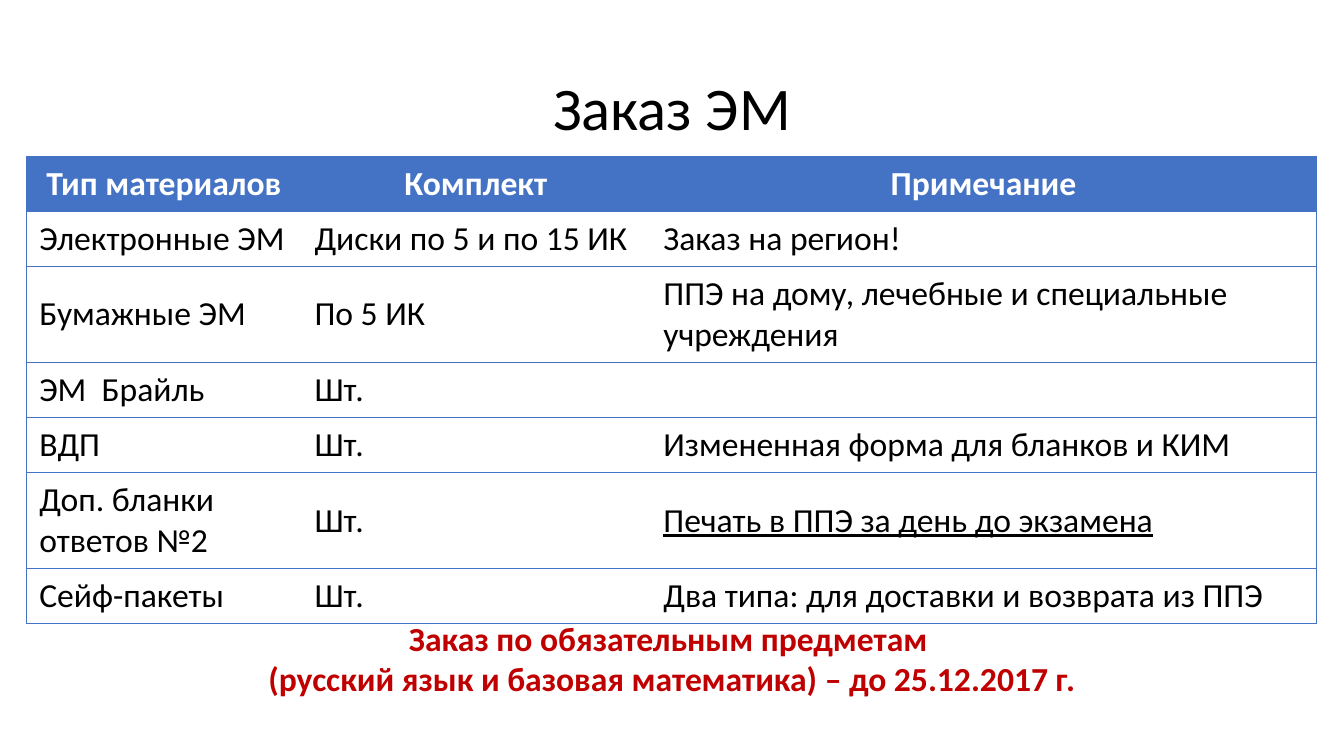
from lxml.etree import SubElement
from pptx import Presentation
from pptx.dml.color import RGBColor
from pptx.enum.text import MSO_ANCHOR, MSO_AUTO_SIZE, PP_ALIGN
from pptx.oxml.ns import qn
from pptx.util import Inches, Pt

BLUE = RGBColor(0x44, 0x72, 0xC4)
RED = RGBColor(0xC0, 0x00, 0x00)
BLACK = RGBColor(0, 0, 0)
WHITE = RGBColor(0xFF, 0xFF, 0xFF)

WIDE, HIGH = Inches(13.33), Inches(7.5)
LEFT, SPAN = Inches(0.26), Inches(12.81)
COLS = [2.73, 3.46, 6.61]
LINE, EXTRA = 0.53, 0.4
TALL = {2, 5}
UNDER = (5, 2)
ROWS = [
    ("Тип материалов", "Комплект", "Примечание"),
    ("Электронные ЭМ", "Диски по 5 и по 15 ИК", "Заказ на регион!"),
    ("Бумажные ЭМ", "По 5 ИК", "ППЭ на дому, лечебные и специальные учреждения"),
    ("ЭМ  Брайль", "Шт.", ""),
    ("ВДП", "Шт.", "Измененная форма для бланков и КИМ"),
    ("Доп. бланки ответов №2", "Шт.", "Печать в ППЭ за день до экзамена"),
    ("Сейф-пакеты", "Шт.", "Два типа: для доставки и возврата из ППЭ"),
]
NOTE = [
    "Заказ по обязательным предметам ",
    "(русский язык и базовая математика) – до 25.12.2017 г.",
]


def write(frame, lines, size=24, color=BLACK, bold=False, under=False,
          align=PP_ALIGN.LEFT, space=1.0):
    frame.word_wrap = True
    for i, line in enumerate(lines):
        para = frame.add_paragraph() if i else frame.paragraphs[0]
        para.alignment = align
        para.line_spacing = space
        para.font.size = Pt(size)
        if not line:
            continue
        run = para.add_run()
        run.text = line
        font = run.font
        font.name = "Calibri"
        font.size = Pt(size)
        font.bold = bold
        font.underline = under
        font.color.rgb = color


def edge(cell, side, shown):
    props = cell._tc.get_or_add_tcPr()
    line = SubElement(props, qn(f"a:ln{side}"), w=str(Pt(0.5)))
    if shown:
        fill = SubElement(line, qn("a:solidFill"))
        SubElement(fill, qn("a:srgbClr"), val=str(BLUE))
    else:
        SubElement(line, qn("a:noFill"))


def add_title(slide, text):
    title = slide.shapes.title
    title.left, title.top = LEFT, Inches(0.74)
    title.width, title.height = SPAN, Inches(0.72)
    title.text_frame.vertical_anchor = MSO_ANCHOR.MIDDLE
    write(title.text_frame, [text], size=43.2, align=PP_ALIGN.CENTER, space=0.9)


def add_grid(slide):
    highs = [LINE + EXTRA * (r in TALL) for r in range(len(ROWS))]
    table = slide.shapes.add_table(
        len(ROWS), len(COLS), LEFT, Inches(1.55), SPAN, Inches(sum(highs))
    ).table
    table.horz_banding = False
    for col, width in zip(table.columns, COLS):
        col.width = Inches(width)
    for r, (row, high) in enumerate(zip(table.rows, highs)):
        row.height = Inches(high)
        for c, cell in enumerate(row.cells):
            head = r == 0
            cell.margin_left = cell.margin_right = Inches(0.13)
            cell.margin_top = cell.margin_bottom = Inches(0.07)
            cell.vertical_anchor = MSO_ANCHOR.TOP if head else MSO_ANCHOR.MIDDLE
            edge(cell, "L", c == 0)
            edge(cell, "R", c == len(COLS) - 1)
            edge(cell, "T", True)
            edge(cell, "B", True)
            cell.fill.solid()
            cell.fill.fore_color.rgb = BLUE if head else WHITE
            write(cell.text_frame, [ROWS[r][c]], bold=head,
                  color=WHITE if head else BLACK, under=(r, c) == UNDER,
                  align=PP_ALIGN.CENTER if head else PP_ALIGN.LEFT)


def add_note(slide, lines):
    box = slide.shapes.add_textbox(LEFT, Inches(6.08), SPAN, Inches(0.91))
    box.text_frame.auto_size = MSO_AUTO_SIZE.SHAPE_TO_FIT_TEXT
    write(box.text_frame, lines, color=RED, bold=True, align=PP_ALIGN.CENTER)


def main():
    deck = Presentation()
    deck.slide_width, deck.slide_height = WIDE, HIGH
    slide = deck.slides.add_slide(deck.slide_layouts[5])
    add_grid(slide)
    add_note(slide, NOTE)
    add_title(slide, "Заказ ЭМ")
    deck.save("out.pptx")


if __name__ == "__main__":
    main()
